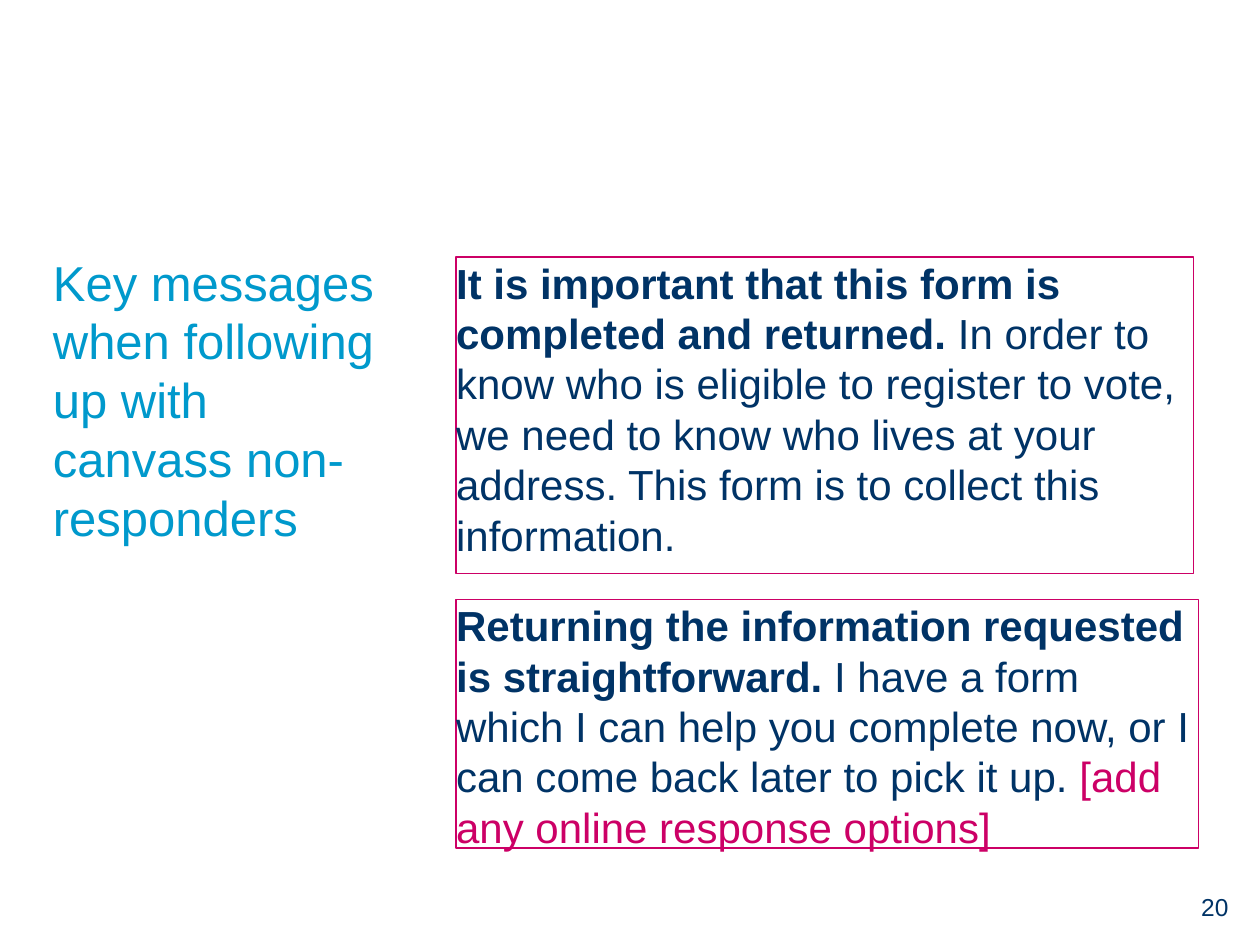
from pptx import Presentation
from pptx.dml.color import RGBColor
from pptx.enum.shapes import MSO_SHAPE
from pptx.enum.text import MSO_ANCHOR, PP_ALIGN
from pptx.util import Inches, Pt

NAVY, BLUE, PINK = "003366", "0099CC", "CC0066"


def color(value):
    return RGBColor.from_string(value)


def write(box, *parts, size=24, align=PP_ALIGN.LEFT, right=0):
    frame = box.text_frame
    frame.word_wrap = True
    frame.vertical_anchor = MSO_ANCHOR.TOP
    frame.margin_left = frame.margin_top = frame.margin_bottom = 0
    frame.margin_right = Inches(right)
    para = frame.paragraphs[0]
    para.alignment = align
    para.line_spacing = 1
    para.space_before = Pt(0)
    for text, shade, bold in parts:
        span = para.add_run()
        span.text = text
        span.font.name = "Arial"
        span.font.size = Pt(size)
        span.font.bold = bold
        span.font.color.rgb = color(shade)


deck = Presentation()
deck.slide_width, deck.slide_height = Inches(10), Inches(7.5)
page = deck.slides.add_slide(deck.slide_layouts[5])

title = page.shapes.title
title.left, title.top = Inches(0.42), Inches(2)
title.width, title.height = Inches(2.75), Inches(4.67)
write(title, ("Key messages when following up with canvass non-responders", BLUE, False), size=28)

messages = [
    (4.76, 5.89, 1.97, [
        ("Returning the information requested is straightforward. ", NAVY, True),
        ("I have a form which I can help you complete now, or I can come back later to pick it up. ", NAVY, False),
        ("[add any online response options]", PINK, False),
    ]),
    (2.04, 5.85, 2.51, [
        ("It is important that this form is completed and returned. ", NAVY, True),
        ("In order to know who is eligible to register to vote, we need to know who lives at your address. "
         "This form is to collect this information.", NAVY, False),
    ]),
]
for top, width, height, parts in messages:
    message = page.shapes.add_shape(
        MSO_SHAPE.RECTANGLE, Inches(3.62), Inches(top), Inches(width), Inches(height))
    message.shadow.inherit = False
    message.fill.background()
    message.line.color.rgb = color(PINK)
    message.line.width = Pt(0.75)
    write(message, *parts, right=0.04)

number = page.shapes.add_textbox(Inches(7.67), Inches(7.08), Inches(2.08), Inches(0.25))
write(number, ("20", NAVY, False), size=14, align=PP_ALIGN.RIGHT)

deck.save("out.pptx")
